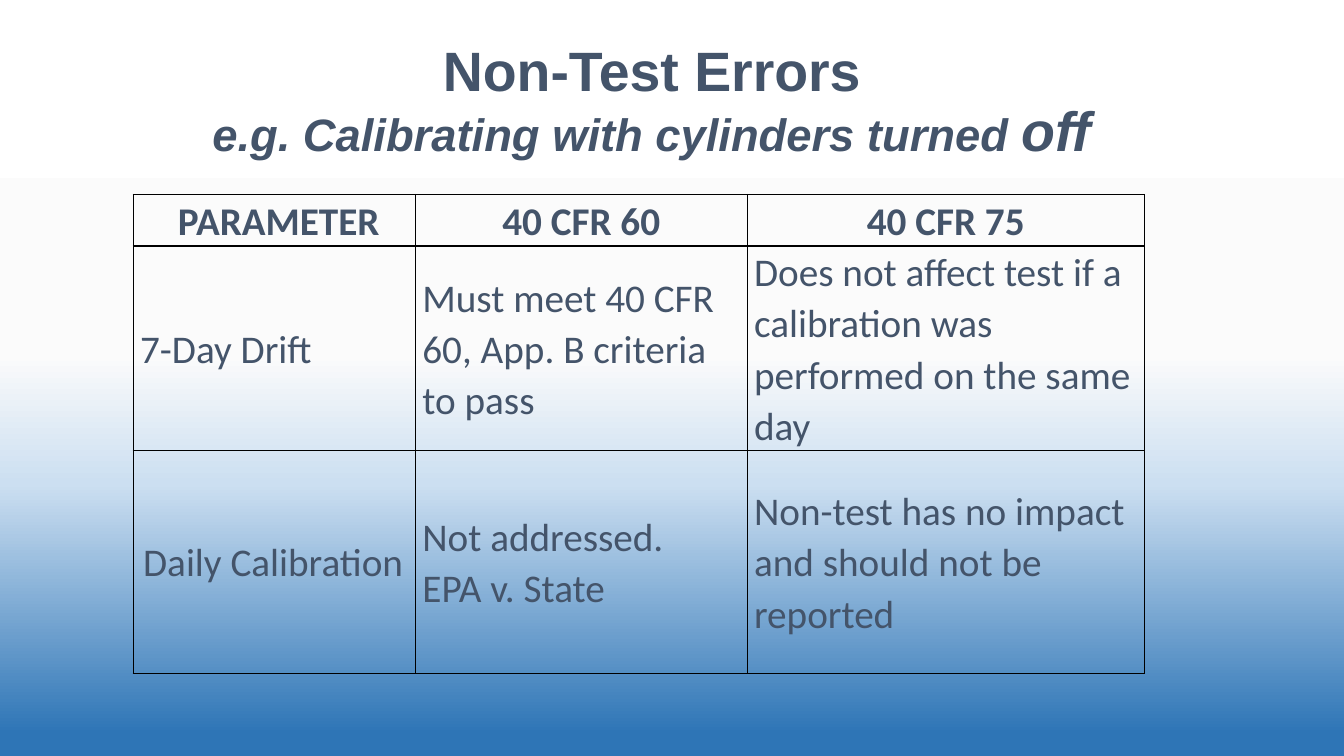
from dataclasses import dataclass

from pptx import Presentation
from pptx.dml.color import RGBColor as RGB
from pptx.enum.text import MSO_ANCHOR as ANCHOR, PP_ALIGN as ALIGN
from pptx.oxml.ns import qn
from pptx.oxml.xmlchemy import OxmlElement as Element
from pptx.slide import Slide
from pptx.table import _Cell as Cell
from pptx.text.text import _Run as Run
from pptx.util import Inches, Pt

COLORS = {
    "text": "44546A",
    "border": "000000",
    "white": "FFFFFF",
    "mist": "FBFBFB",
    "sky": "CCDFF1",
    "blue": "2E75B6",
}
BACKGROUND_STOPS = [(0, "white"), (47, "mist"), (64, "sky"), (97, "blue")]
COLUMN_WIDTHS = [2.8, 3.29, 3.94]
ROW_HEIGHTS = [0.51, 2.03, 2.21]


@dataclass
class CellText:
    text: str
    header: bool = False
    margin_x: float = 0.07
    margin_y: float = 0


@dataclass
class TitlePart:
    text: str
    size: float
    italic: bool = False
    break_after: bool = False


TITLE = [
    TitlePart("Non-Test Errors", 39.6, break_after=True),
    TitlePart("e.g. Calibrating with cylinders turned ", 32.4, italic=True),
    TitlePart("off", 39.6, italic=True),
]
ROWS = [
    [
        CellText(" PARAMETER", header=True),
        CellText("40 CFR 60", header=True),
        CellText("40 CFR 75", header=True),
    ],
    [
        CellText("7-Day Drift"),
        CellText("Must meet 40 CFR 60, App. B criteria to pass"),
        CellText("Does not affect test if a calibration was performed on the same day"),
    ],
    [
        CellText("Daily Calibration", margin_x=0.1, margin_y=0.05),
        CellText("Not addressed.\nEPA v. State"),
        CellText("Non-test has no impact and should not be reported"),
    ],
]


def add_color(parent, name: str) -> None:
    color = Element("a:srgbClr")
    color.set("val", COLORS[name])
    parent.append(color)


def set_background(slide: Slide) -> None:
    fill = slide.background.fill
    fill.gradient()
    fill.gradient_angle = 270
    stops = slide.element.find(".//" + qn("a:gsLst"))
    for stop in list(stops):
        stops.remove(stop)
    for position, name in BACKGROUND_STOPS:
        stop = Element("a:gs")
        stop.set("pos", str(position * 1000))
        add_color(stop, name)
        stops.append(stop)


def format_run(r: Run, font: str, size: float, bold: bool, italic: bool = False) -> None:
    r.font.name = font
    r.font.size = Pt(size)
    r.font.bold = bold
    r.font.italic = italic
    r.font.color.rgb = RGB.from_string(COLORS["text"])


def add_title(slide: Slide) -> None:
    sp = slide.shapes.add_textbox(Inches(1.32), Inches(0.49), Inches(10.29), Inches(1.07))
    tf = sp.text_frame
    tf.word_wrap = True
    tf.vertical_anchor = ANCHOR.MIDDLE
    p = tf.paragraphs[0]
    p.alignment = ALIGN.CENTER
    p.line_spacing = 0.9
    for part in TITLE:
        r = p.add_run()
        r.text = part.text
        format_run(r, "Arial", part.size, True, part.italic)
        if part.break_after:
            p.add_line_break()


def add_borders(cell: Cell) -> None:
    tc_pr = cell._tc.get_or_add_tcPr()
    for side in ("L", "R", "T", "B"):
        line = Element(f"a:ln{side}")
        line.set("w", str(Pt(1)))
        fill = Element("a:solidFill")
        add_color(fill, "border")
        line.append(fill)
        tc_pr.append(line)


def fill_cell(cell: Cell, content: CellText) -> None:
    add_borders(cell)
    cell.fill.background()
    cell.margin_left = cell.margin_right = Inches(content.margin_x)
    cell.margin_top = cell.margin_bottom = Inches(content.margin_y)
    cell.vertical_anchor = ANCHOR.TOP if content.header else ANCHOR.MIDDLE
    tf = cell.text_frame
    tf.text = content.text
    for p in tf.paragraphs:
        p.alignment = ALIGN.CENTER if content.header else ALIGN.LEFT
        p.line_spacing = 1.07
        for r in p.runs:
            format_run(r, "Calibri", 28, content.header)


def add_parameter_table(slide: Slide) -> None:
    table = slide.shapes.add_table(
        len(ROWS), len(COLUMN_WIDTHS), Inches(1.32), Inches(1.93),
        Inches(sum(COLUMN_WIDTHS)), Inches(sum(ROW_HEIGHTS)),
    ).table
    table.first_row = False
    table.horz_banding = False
    for column, width in zip(table.columns, COLUMN_WIDTHS):
        column.width = Inches(width)
    for row, height, contents in zip(table.rows, ROW_HEIGHTS, ROWS):
        row.height = Inches(height)
        for cell, content in zip(row.cells, contents):
            fill_cell(cell, content)


def main() -> None:
    prs = Presentation()
    prs.slide_width = Inches(13.33)
    prs.slide_height = Inches(7.5)
    slide = prs.slides.add_slide(prs.slide_layouts[6])
    set_background(slide)
    add_title(slide)
    add_parameter_table(slide)
    prs.save("out.pptx")


if __name__ == "__main__":
    main()
